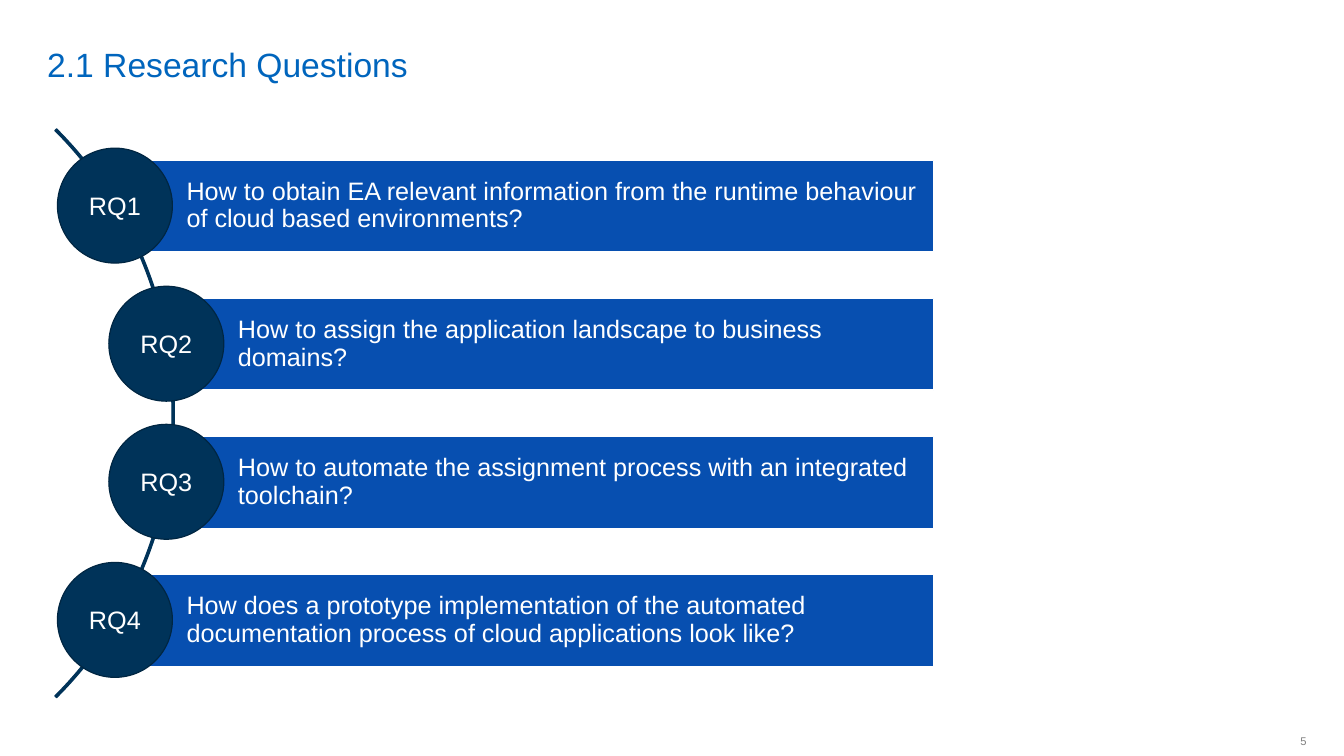
"""Build the research questions slide."""
from pptx import Presentation
from pptx.dml.color import RGBColor
from pptx.enum.shapes import MSO_SHAPE
from pptx.enum.text import MSO_ANCHOR, PP_ALIGN
from pptx.util import Inches, Pt

ARC, DISC, BAR = MSO_SHAPE.BLOCK_ARC, MSO_SHAPE.OVAL, MSO_SHAPE.RECTANGLE
LEFT, CENTER, RIGHT = PP_ALIGN.LEFT, PP_ALIGN.CENTER, PP_ALIGN.RIGHT
MIDDLE, BOTTOM = MSO_ANCHOR.MIDDLE, MSO_ANCHOR.BOTTOM
WHITE, NAVY, DARK, BLUE = "FFFFFF", "003359", "002642", "074FB0"
SKY, GRAY = "0065BD", "808080"
TOP, STEP, EDGE, SIZE = 1.59, 1.37, 9.26, 1.14
ITEMS = [
    ("RQ1", 0.57, "How to obtain EA relevant information from the runtime "
     "behaviour of cloud based environments?"),
    ("RQ2", 1.08, "How to assign the application landscape to business domains?"),
    ("RQ3", 1.08, "How to automate the assignment process with an integrated "
     "toolchain?"),
    ("RQ4", 0.57, "How does a prototype implementation of the automated "
     "documentation process of cloud applications look like?"),
]


def color(value):
    """Turn a hex string into a colour."""
    return RGBColor.from_string(value)


def assign(target, values):
    """Set attributes from a dict of format values."""
    for key, value in values.items():
        setattr(target, key, value)


def write(shape, text, size, tint, pad, align=LEFT, anchor=MIDDLE, lead=1.0):
    """Put one formatted paragraph into a shape."""
    frame = shape.text_frame
    left, top, right, base = map(Inches, pad)
    assign(frame, {"word_wrap": True, "vertical_anchor": anchor,
                   "margin_left": left, "margin_top": top,
                   "margin_right": right, "margin_bottom": base})
    line = frame.paragraphs[0]
    assign(line, {"text": text, "alignment": align, "line_spacing": lead})
    assign(line.font, {"name": "Arial", "size": Pt(size)})
    line.font.color.rgb = color(tint)


def label(slide, box, *args, **format):
    """Add a text box."""
    write(slide.shapes.add_textbox(*map(Inches, box)), *args, **format)


def form(slide, kind, box, fill, edge):
    """Add a filled and outlined shape."""
    shape = slide.shapes.add_shape(kind, *map(Inches, box))
    shape.shadow.inherit = False
    shape.fill.solid()
    shape.fill.fore_color.rgb = color(fill)
    shape.line.color.rgb = color(edge)
    shape.line.width = Pt(0.85)
    return shape


def curve(slide):
    """Add the thin arc that joins the discs."""
    arc = form(slide, ARC, (-6.25, 0.11, 7.98, 7.98), NAVY, NAVY)
    for index, value in enumerate((189, 27, 0.003)):
        arc.adjustments[index] = value


def question(slide, row, name, left, text):
    """Add one question bar with its disc."""
    top = TOP + row * STEP
    start = left + SIZE / 2
    bar = form(slide, BAR, (start, top, EDGE - start, 0.91), BLUE, WHITE)
    write(bar, text, 18, WHITE, (0.71, 0.05, 0.05, 0.05), lead=0.9)
    disc = form(slide, DISC, (left, top - 0.12, SIZE, SIZE), NAVY, DARK)
    write(disc, name, 18, WHITE, (0.1, 0.05, 0.1, 0.05), align=CENTER)


def main():
    """Build and save the slide."""
    deck = Presentation()
    assign(deck, {"slide_width": Inches(13.33), "slide_height": Inches(7.5)})
    slide = deck.slides.add_slide(deck.slide_layouts[6])
    label(slide, (0.37, 0.05, 11.58, 0.79), "2.1 Research Questions", 24, SKY,
          (0.1, 0, 0.1, 0), anchor=BOTTOM)
    label(slide, (12.6, 7.19, 0.36, 0.32), "5", 8, GRAY,
          (0.1, 0.05, 0, 0.05), align=RIGHT)
    curve(slide)
    for row, item in enumerate(ITEMS):
        question(slide, row, *item)
    deck.save("out.pptx")


if __name__ == "__main__":
    main()
